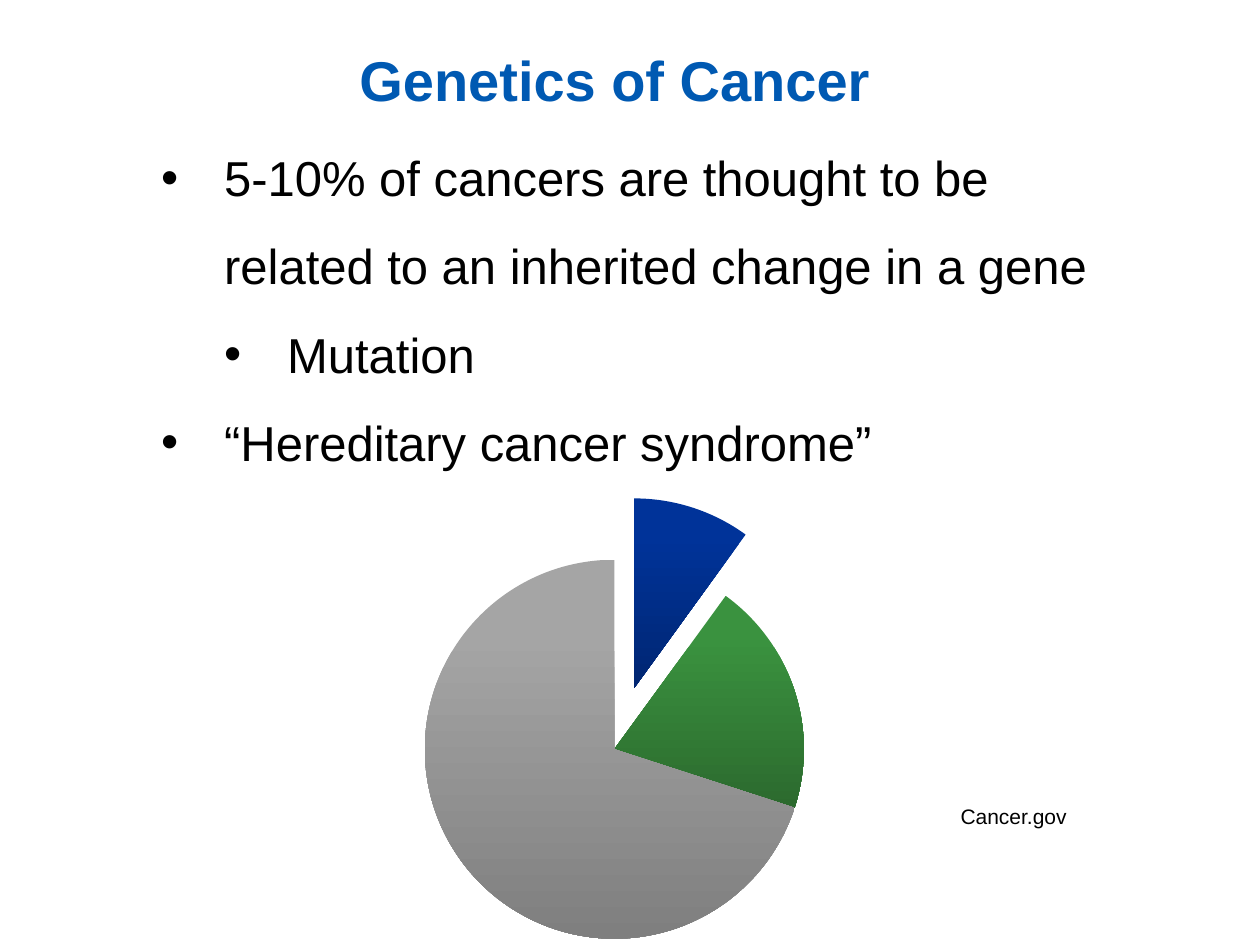
from pptx import Presentation
from pptx.chart.data import CategoryChartData
from pptx.dml.color import RGBColor
from pptx.enum.chart import XL_CHART_TYPE as ChartType
from pptx.enum.text import MSO_ANCHOR as Anchor, PP_ALIGN as Align
from pptx.oxml import parse_xml
from pptx.oxml.ns import nsdecls, qn
from pptx.util import Cm, Pt

THEME = {
    "font": "Arial",
    "title": {"size": Pt(32), "bold": True, "color": "0059B2"},
    "body": {"size": Pt(28), "bold": False, "color": "000000"},
    "source": {"size": Pt(12), "bold": False, "color": "000000"},
    "chart": {"size": Pt(18), "bold": False, "color": "FFFFFF"},
    "slices": [("003399", "002672"), ("3A923F", "2C6A2E"), ("A5A5A5", "7F7F7F")],
}


def style_font(font, role):
    formats = {"name": THEME["font"], **THEME[role]}
    font.color.rgb = RGBColor.from_string(formats.pop("color"))
    for name, value in formats.items():
        setattr(font, name, value)


def add_text(slide, box, lines, role, **paragraph_format):
    shape = slide.shapes.add_textbox(*map(Cm, box))
    frame = shape.text_frame
    frame.word_wrap = True
    for index, line in enumerate(lines):
        paragraph = frame.paragraphs[0] if index == 0 else frame.add_paragraph()
        for name, value in paragraph_format.items():
            setattr(paragraph, name, value)
        run = paragraph.add_run()
        run.text = line
        style_font(run.font, role)
    return frame


presentation = Presentation()
presentation.slide_width, presentation.slide_height = Cm(25.4), Cm(19.05)
slide = presentation.slides.add_slide(presentation.slide_layouts[6])

# Title and source
title = add_text(slide, (1.6, 0.36, 21.59, 2.49), ["Genetics of Cancer"],
                 "title", alignment=Align.CENTER)
title.vertical_anchor = Anchor.MIDDLE
add_text(slide, (15.47, 16.08, 9.93, 1.17), ["Cancer.gov"],
         "source", alignment=Align.CENTER)

# Bulleted points
points = [
    ("5-10% of cancers are thought to be related to an inherited change in a gene", 0),
    ("Mutation", 1),
    ("“Hereditary cancer syndrome”", 0),
]
body = add_text(slide, (3, 2.26, 20.02, 9.25), [text for text, level in points],
                "body", line_spacing=1.5)
for paragraph, (text, level) in zip(body.paragraphs, points):
    paragraph.level = level
    properties = paragraph._p.get_or_add_pPr()
    properties.set("marL", str(Cm(1.27 * (level + 1))))
    properties.set("indent", str(Cm(-1.27)))
    properties.append(parse_xml(f'<a:buFont {nsdecls("a")} typeface="Arial"/>'))
    properties.append(parse_xml(f'<a:buChar {nsdecls("a")} char="•"/>'))

# Pie chart
data = CategoryChartData()
data.categories = ["1", "2", "3"]
data.add_series("Series 1", (10, 20, 70))
chart = slide.shapes.add_chart(
    ChartType.PIE, Cm(4.98), Cm(9.53), Cm(14.81), Cm(11.15), data).chart
chart.has_legend = False
chart.has_title = False
style_font(chart.font, "chart")
plot = chart.plots[0]
plot.vary_by_categories = True

# Slices, shaded from top to bottom
series = plot.series[0]
for index, colors in enumerate(THEME["slices"]):
    slice_format = series.points[index].format
    slice_format.line.fill.background()
    fill = slice_format.fill
    fill.gradient()
    fill.gradient_angle = 270
    for stop, position, color in zip(fill.gradient_stops, (0.2, 1), colors):
        stop.position = position
        stop.color.rgb = RGBColor.from_string(color)

# Pull out the first slice
first_slice = series._element.find(qn("c:dPt"))
first_slice.find(qn("c:spPr")).addprevious(
    parse_xml(f'<c:explosion {nsdecls("c")} val="34"/>'))

# Plot position within the chart
layout = {"layoutTarget": "inner", "xMode": "edge", "yMode": "edge",
          "x": 0.242, "y": 0.031, "w": 0.516, "h": 0.938}
settings = "".join(f'<c:{name} val="{value}"/>' for name, value in layout.items())
plot_area = chart._chartSpace.chart.plotArea
for old_layout in plot_area.findall(qn("c:layout")):
    plot_area.remove(old_layout)
plot_area.insert(0, parse_xml(
    f'<c:layout {nsdecls("c")}><c:manualLayout>{settings}</c:manualLayout></c:layout>'))

presentation.save("out.pptx")
